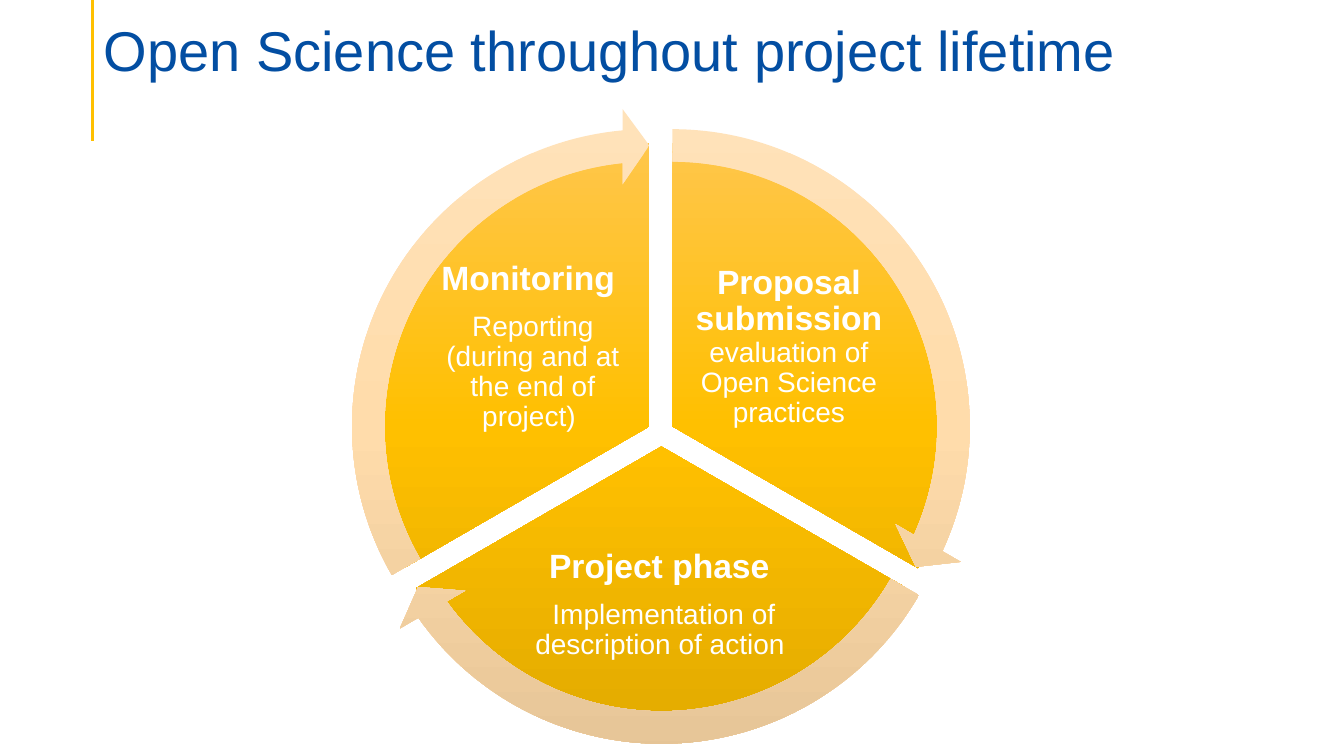
from copy import deepcopy

from lxml import etree
from pptx import Presentation
from pptx import util as u
from pptx.dml.color import RGBColor
from pptx.enum import shapes, text
from pptx.oxml import ns

COLORS = {
    "title": "034EA2",
    "rule": "FFC000",
    "label": "FFFFFF",
}
PIE_GRADIENT = [(0, "FFC64B"), (0.5, "FFC000"), (1, "E3AB00")]
ARROW_GRADIENT = [(0, "FFE2B9"), (0.5, "FFDCAB"), (1, "E5C496")]

TITLE_FONT = {"name": "Arial", "size": u.Pt(40)}
HEADING_FONT = {"name": "Arial", "size": u.Pt(24), "bold": True}
DETAIL_FONT = {"name": "Arial", "size": u.Pt(20), "bold": False}

PIE_RADIUS = 2.81
ARROW_RADIUS = 3.16

PHASES = [
    {
        "offset": (0.11, 0),
        "pie": (162, 18),
        "arrow": (14.725, 161.994),
        "label_box": (0.26, -1.62, 2.01, 1.67),
        "paragraphs": [[
            ("Proposal submission ", HEADING_FONT),
            ("evaluation of Open Science practices", DETAIL_FONT),
        ]],
    },
    {
        "offset": (0, 0.2),
        "pie": (18, 90),
        "arrow": (86.72, 18.005),
        "label_box": (-1.48, 1.04, 3.01, 1.47),
        "paragraphs": [
            [("Project phase ", HEADING_FONT)],
            [("Implementation of description of action ", DETAIL_FONT)],
        ],
    },
    {
        "offset": (-0.12, 0),
        "pie": (90, 162),
        "arrow": (158.73, 90),
        "label_box": (-2.28, -1.62, 2.01, 1.67),
        "paragraphs": [
            [("Monitoring ", HEADING_FONT)],
            [("Reporting (during and at the end of project) ", DETAIL_FONT)],
        ],
    },
]


def apply_format(target, values):
    for name, value in values.items():
        setattr(target, name, value)


def fill_gradient(shape, stops):
    shape.fill.gradient()
    shape.fill.gradient_angle = 270
    first = shape._element.spPr.find(".//" + ns.qn("a:gs"))
    first.addnext(deepcopy(first))
    for stop, (position, color) in zip(shape.fill.gradient_stops, stops):
        stop.position = position
        stop.color.rgb = RGBColor.from_string(color)


def add_round_shape(slide, kind, center, radius, adjustments, stops):
    x, y = center
    shape = slide.shapes.add_shape(
        kind, u.Inches(x - radius), u.Inches(y - radius),
        u.Inches(2 * radius), u.Inches(2 * radius))
    for index, value in enumerate(adjustments):
        shape.adjustments[index] = value
    fill_gradient(shape, stops)
    shape.line.fill.background()
    shape.shadow.inherit = False


def add_text(slide, box, paragraphs, color, frame_format, paragraph_format):
    frame = slide.shapes.add_textbox(*map(u.Inches, box)).text_frame
    apply_format(frame, {"word_wrap": True, **frame_format})
    for index, runs in enumerate(paragraphs):
        paragraph = frame.add_paragraph() if index else frame.paragraphs[0]
        apply_format(paragraph, {"line_spacing": 0.9, **paragraph_format})
        for words, font in runs:
            run = paragraph.add_run()
            run.text = words
            apply_format(run.font, font)
            run.font.color.rgb = RGBColor.from_string(COLORS[color])


def add_header(slide, box):
    left, top, width, height = box
    rule = slide.shapes.add_connector(
        shapes.MSO_CONNECTOR.STRAIGHT,
        *map(u.Inches, (left - 0.01, top, left - 0.01, top + 1.4)))
    rule.line.color.rgb = RGBColor.from_string(COLORS["rule"])
    rule.line.width = u.Pt(2.25)
    etree.SubElement(rule._element.spPr, ns.qn("a:effectLst"))
    add_text(
        slide, box,
        [[("Open Science throughout project lifetime", TITLE_FONT)]], "title",
        {"vertical_anchor": text.MSO_ANCHOR.BOTTOM, "margin_bottom": 0},
        {"alignment": text.PP_ALIGN.LEFT})


def add_cycle(slide, box):
    left, top, width, height = box
    hub_x, hub_y = left + width / 2, top + height / 2
    centers = [(hub_x + phase["offset"][0], hub_y + phase["offset"][1])
               for phase in PHASES]
    margins = {f"margin_{side}": u.Inches(0.03)
               for side in ("left", "top", "right", "bottom")}
    for phase, center in zip(PHASES, centers):
        add_round_shape(slide, shapes.MSO_SHAPE.PIE, center, PIE_RADIUS,
                        phase["pie"], PIE_GRADIENT)
        x, y, label_width, label_height = phase["label_box"]
        add_text(
            slide, (hub_x + x, hub_y + y, label_width, label_height),
            phase["paragraphs"], "label",
            {"vertical_anchor": text.MSO_ANCHOR.MIDDLE, **margins},
            {"alignment": text.PP_ALIGN.CENTER, "space_after": u.Pt(10)})
    for phase, center in zip(PHASES, centers):
        add_round_shape(slide, shapes.MSO_SHAPE.CIRCULAR_ARROW, center,
                        ARROW_RADIUS, (0.051, 3.275, *phase["arrow"], 0.059),
                        ARROW_GRADIENT)


def main():
    presentation = Presentation()
    presentation.slide_width = u.Inches(13.33)
    presentation.slide_height = u.Inches(7.5)
    slide = presentation.slides.add_slide(presentation.slide_layouts[6])
    add_header(slide, (0.93, 0, 12.01, 0.83))
    add_cycle(slide, (3.28, 1.07, 6.56, 6.32))
    presentation.save("out.pptx")


if __name__ == "__main__":
    main()
